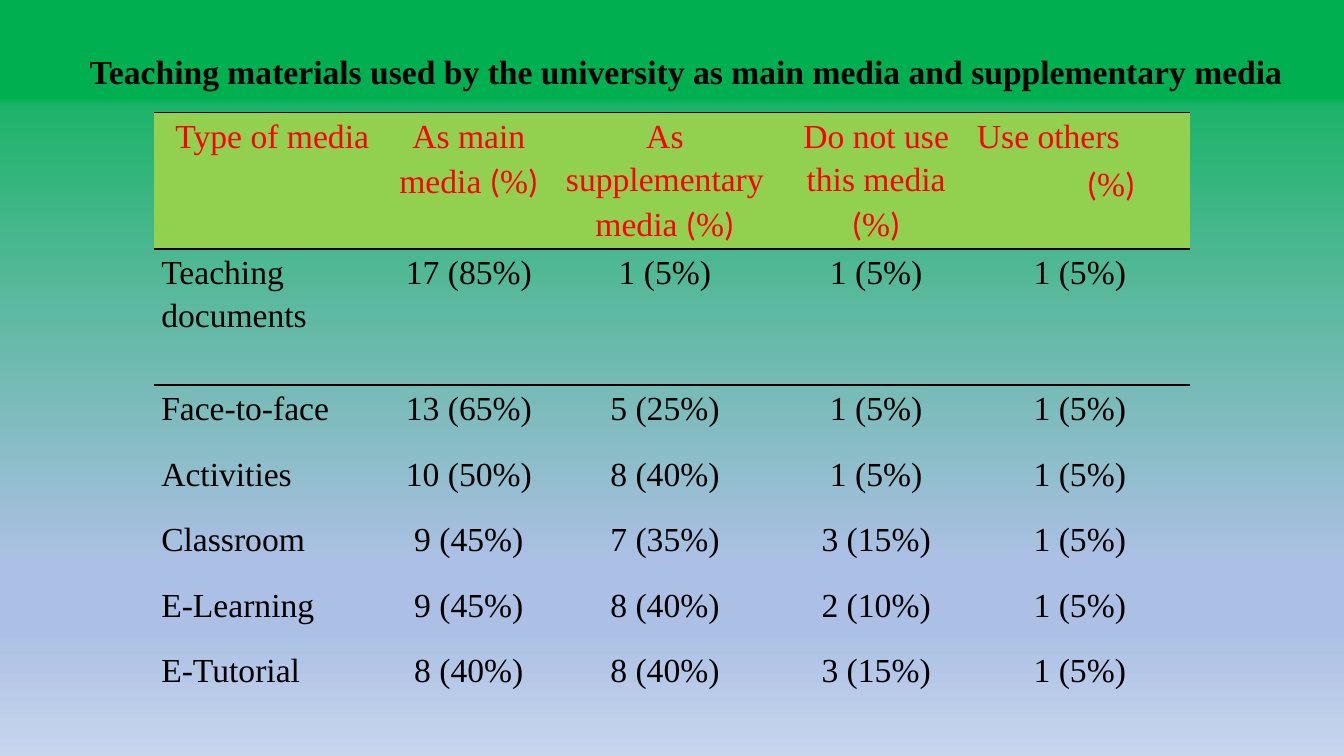
from pptx import Presentation
from pptx.dml.color import RGBColor
from pptx.enum.text import MSO_ANCHOR as Anchor, PP_ALIGN as Align
from pptx.oxml.ns import qn
from pptx.util import Inches, Pt
from lxml.etree import SubElement

BACKDROP = [(13, "00B050"), (14, "1EB36A"), (74, "ABC0E4"),
            (83, "ABC0E4"), (100, "C7D5ED")]
HEADINGS = ["Type of media", "As main media (%)", "As supplementary media (%)",
            "Do not use this media (%)", "Use others\n(%)"]
MEDIA_USE = [
    ["Teaching documents", "17 (85%)", "1 (5%)", "1 (5%)", "1 (5%)"],
    ["Face-to-face", "13 (65%)", "5 (25%)", "1 (5%)", "1 (5%)"],
    ["Activities", "10 (50%)", "8 (40%)", "1 (5%)", "1 (5%)"],
    ["Classroom", "9 (45%)", "7 (35%)", "3 (15%)", "1 (5%)"],
    ["E-Learning", "9 (45%)", "8 (40%)", "2 (10%)", "1 (5%)"],
    ["E-Tutorial", "8 (40%)", "8 (40%)", "3 (15%)", "1 (5%)"],
]
COLUMN_WIDTHS = [2.34, 1.56, 2.33, 1.86, 2.18]
ROW_HEIGHTS = [1.35] * 2 + [0.65] * 5
NO_STYLE = "{2D5ABB26-0587-4C30-8999-92F81FD0307C}"


def rgb(color):
    return RGBColor.from_string(color)


class SlideBuilder:
    font, bracket_font, size = "Times New Roman", "Calibri", 24
    ink, heading_ink, heading_fill = "000000", "FF0000", "92D050"

    def __init__(self, slide):
        self.slide = slide

    def backdrop(self, stops):
        fill = self.slide.background.fill
        fill.gradient()
        fill.gradient_angle = 270
        stop_list = next(self.slide.element.iter(qn("a:gsLst")))
        for old_stop in list(stop_list):
            stop_list.remove(old_stop)
        for percent, color in stops:
            stop = SubElement(stop_list, qn("a:gs"), pos=str(percent * 1000))
            SubElement(stop, qn("a:srgbClr"), val=color)

    def run(self, paragraph, text, color, font=None, bold=False):
        run = paragraph.add_run()
        run.text = text
        run.font.name = font or self.font
        run.font.size = Pt(self.size)
        run.font.bold = bold
        run.font.color.rgb = rgb(color)

    def title(self, text, left, top, width, height):
        box = self.slide.shapes.add_textbox(
            Inches(left), Inches(top), Inches(width), Inches(height))
        frame = box.text_frame
        frame.word_wrap = False
        frame.vertical_anchor = Anchor.MIDDLE
        frame.paragraphs[0].alignment = Align.CENTER
        self.run(frame.paragraphs[0], text, self.ink, bold=True)

    def rule(self, cell, side):
        line = SubElement(cell._tc.get_or_add_tcPr(), qn(f"a:{side}"), w=str(Pt(1)))
        SubElement(SubElement(line, qn("a:solidFill")), qn("a:srgbClr"), val=self.ink)

    def paragraph(self, paragraph, align):
        paragraph.alignment = align
        paragraph.line_spacing = 1.15
        paragraph.space_after = Pt(10)
        return paragraph

    def heading(self, cell, text):
        lines = text.split("\n")
        for number, line in enumerate(lines):
            frame = cell.text_frame
            paragraph = frame.add_paragraph() if number else frame.paragraphs[0]
            self.paragraph(paragraph, Align.CENTER if len(lines) == 1 else Align.LEFT)
            if number:  # second line steps in to the right
                paragraph._p.get_or_add_pPr().set("marL", str(Inches(1.09)))
            elif len(lines) > 1:
                paragraph.space_after = Pt(2)
            label, bracket, _ = line.partition("(")
            if label:
                self.run(paragraph, label, self.heading_ink)
            if bracket:
                self.run(paragraph, "(", self.heading_ink, self.bracket_font)
                self.run(paragraph, "%", self.heading_ink)
                self.run(paragraph, ")", self.heading_ink, self.bracket_font)

    def table(self, rows, left, top, widths, heights):
        frame = self.slide.shapes.add_table(
            len(rows), len(widths), Inches(left), Inches(top),
            Inches(sum(widths)), Inches(sum(heights)))
        table = frame.table
        table.first_row = table.horz_banding = False
        next(table._tbl.iter(qn("a:tableStyleId"))).text = NO_STYLE
        for column, width in zip(table.columns, widths):
            column.width = Inches(width)
        for row, height in zip(table.rows, heights):
            row.height = Inches(height)
        for r, row in enumerate(rows):
            for c, text in enumerate(row):
                cell = table.cell(r, c)
                cell.margin_left = cell.margin_right = Inches(0.07)
                cell.margin_top = cell.margin_bottom = 0
                if r < 2:
                    self.rule(cell, "lnT")
                if r == 0:
                    self.rule(cell, "lnB")
                    cell.fill.solid()
                    cell.fill.fore_color.rgb = rgb(self.heading_fill)
                    self.heading(cell, text)
                else:
                    cell.fill.background()
                    paragraph = self.paragraph(cell.text_frame.paragraphs[0],
                                               Align.CENTER if c else Align.LEFT)
                    self.run(paragraph, text, self.ink)


def main():
    deck = Presentation()
    deck.slide_width, deck.slide_height = Inches(13.33), Inches(7.5)
    page = SlideBuilder(deck.slides.add_slide(deck.slide_layouts[6]))

    # Background
    page.backdrop(BACKDROP)

    # Table of media use
    page.table([HEADINGS] + MEDIA_USE, 1.53, 1.12, COLUMN_WIDTHS, ROW_HEIGHTS)

    # Title
    page.title("Teaching materials used by the university as main media "
               "and supplementary media", 0.73, 0.46, 12.15, 0.5)

    deck.save("out.pptx")


if __name__ == "__main__":
    main()
